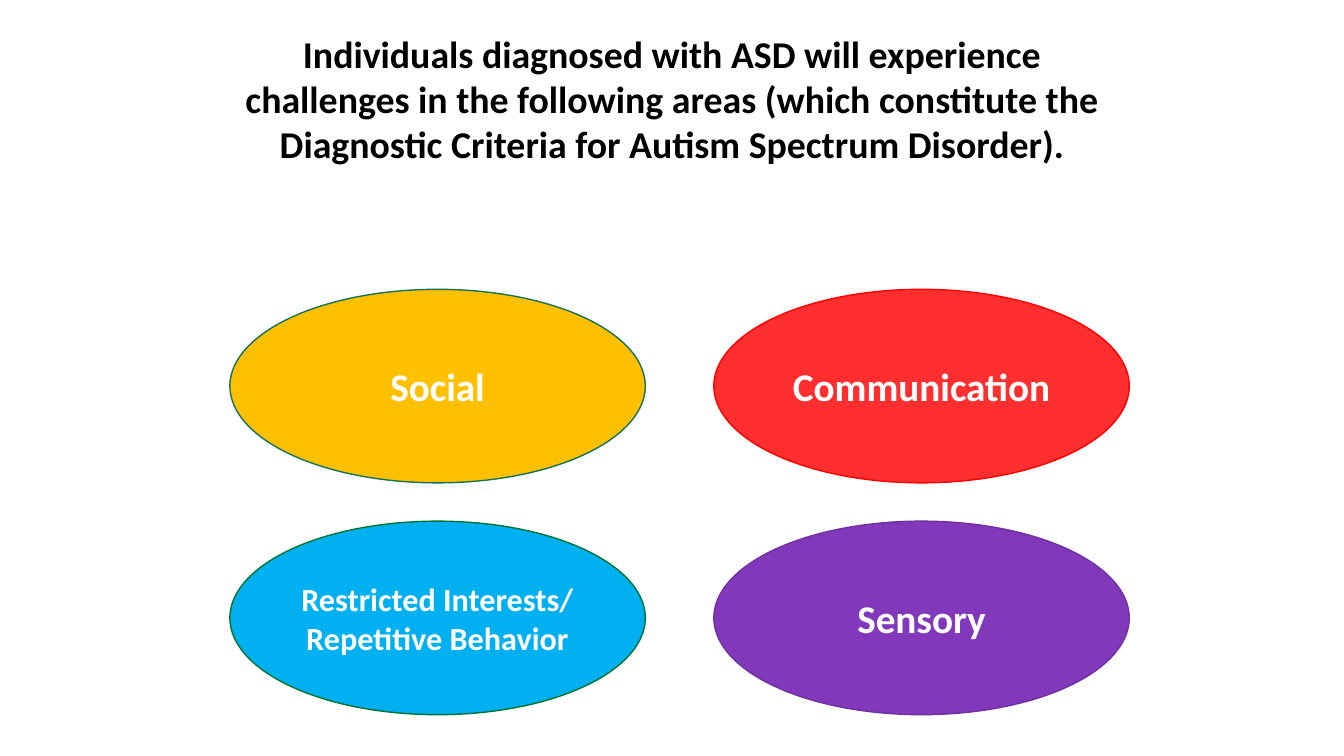
from pptx import Presentation
from pptx.dml.color import RGBColor
from pptx.enum.shapes import MSO_SHAPE
from pptx.enum.text import MSO_ANCHOR, MSO_AUTO_SIZE, PP_ALIGN
from pptx.util import Inches, Pt

TITLE = (
    "Individuals diagnosed with ASD will experience challenges in the following areas "
    "(which constitute the Diagnostic Criteria for Autism Spectrum Disorder)."
)
AREAS = [
    ("Social", 28, "FFC000", "157259"),
    ("Communication", 28, "FF2F2F", "FF0000"),
    ("Restricted Interests/ Repetitive Behavior", 23, "00B0F0", "007434"),
    ("Sensory", 28, "8238BA", "7030A0"),
]
COLUMNS = 2
LEFT, TOP = 2.28, 2.87
WIDTH, HEIGHT = 4.12, 1.92
COLUMN_STEP, ROW_STEP = 4.8, 2.3


def color(value):
    return RGBColor.from_string(value)


def write(shape, text, size, text_color, anchor):
    frame = shape.text_frame
    frame.word_wrap = True
    frame.auto_size = MSO_AUTO_SIZE.NONE
    frame.vertical_anchor = anchor
    paragraph = frame.paragraphs[0]
    paragraph.alignment = PP_ALIGN.CENTER
    run = paragraph.add_run()
    run.text = text
    run.font.name = "Calibri"
    run.font.size = Pt(size)
    run.font.bold = True
    run.font.color.rgb = color(text_color)


def add_area(slide, index, text, size, fill, line):
    row, column = divmod(index, COLUMNS)
    shape = slide.shapes.add_shape(
        MSO_SHAPE.OVAL,
        Inches(LEFT + column * COLUMN_STEP),
        Inches(TOP + row * ROW_STEP),
        Inches(WIDTH),
        Inches(HEIGHT),
    )
    shape.shadow.inherit = False
    shape.fill.solid()
    shape.fill.fore_color.rgb = color(fill)
    shape.line.color.rgb = color(line)
    shape.line.width = Pt(1)
    write(shape, text, size, "FFFFFF", MSO_ANCHOR.MIDDLE)


def main():
    presentation = Presentation()
    presentation.slide_width = Inches(13.33)
    presentation.slide_height = Inches(7.5)
    slide = presentation.slides.add_slide(presentation.slide_layouts[5])

    title = slide.shapes.title
    title.left, title.top = Inches(2.33), Inches(0.25)
    title.width, title.height = Inches(8.67), Inches(1.46)
    write(title, TITLE, 27, "000000", MSO_ANCHOR.TOP)

    for index, area in enumerate(AREAS):
        add_area(slide, index, *area)

    presentation.save("out.pptx")


if __name__ == "__main__":
    main()
